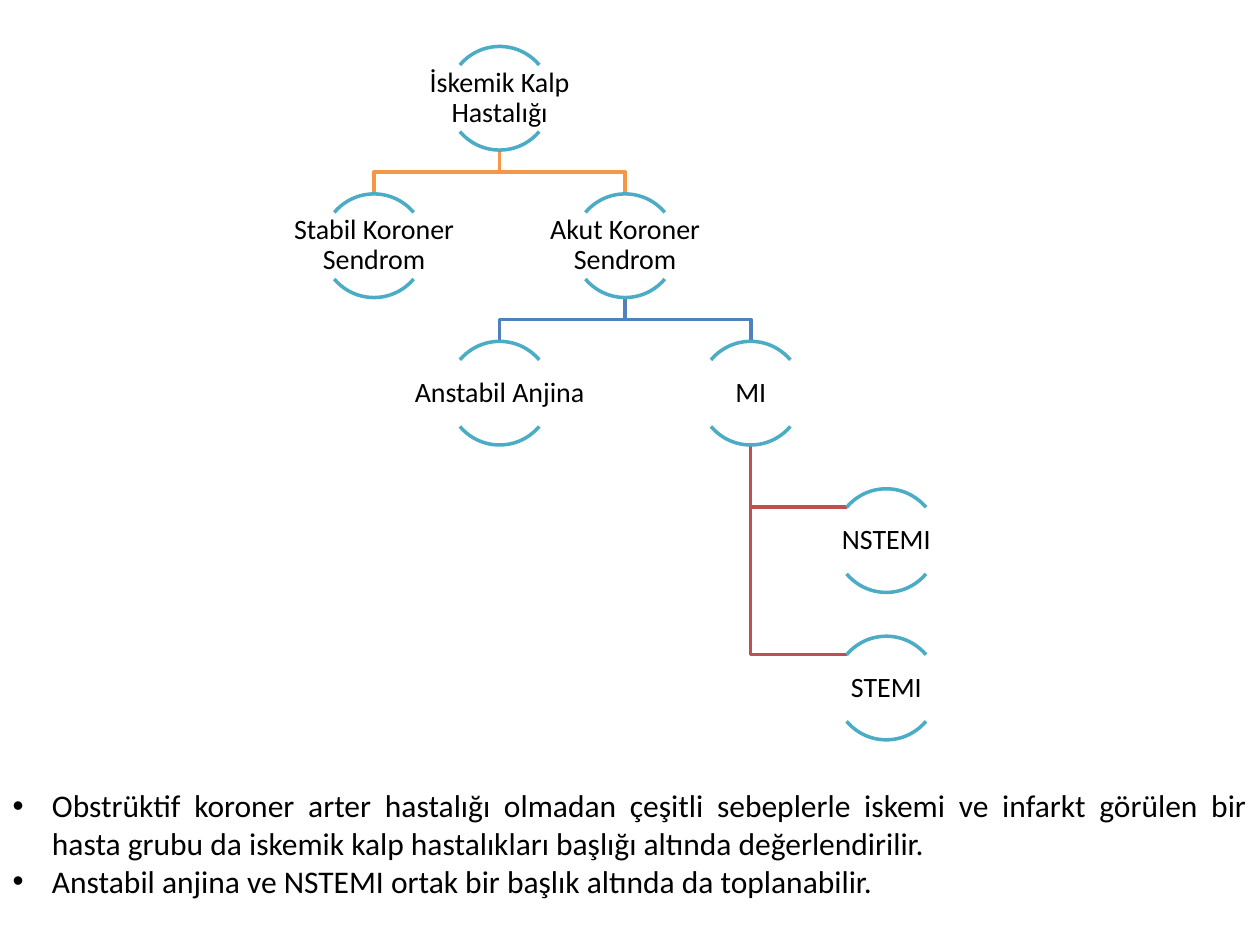
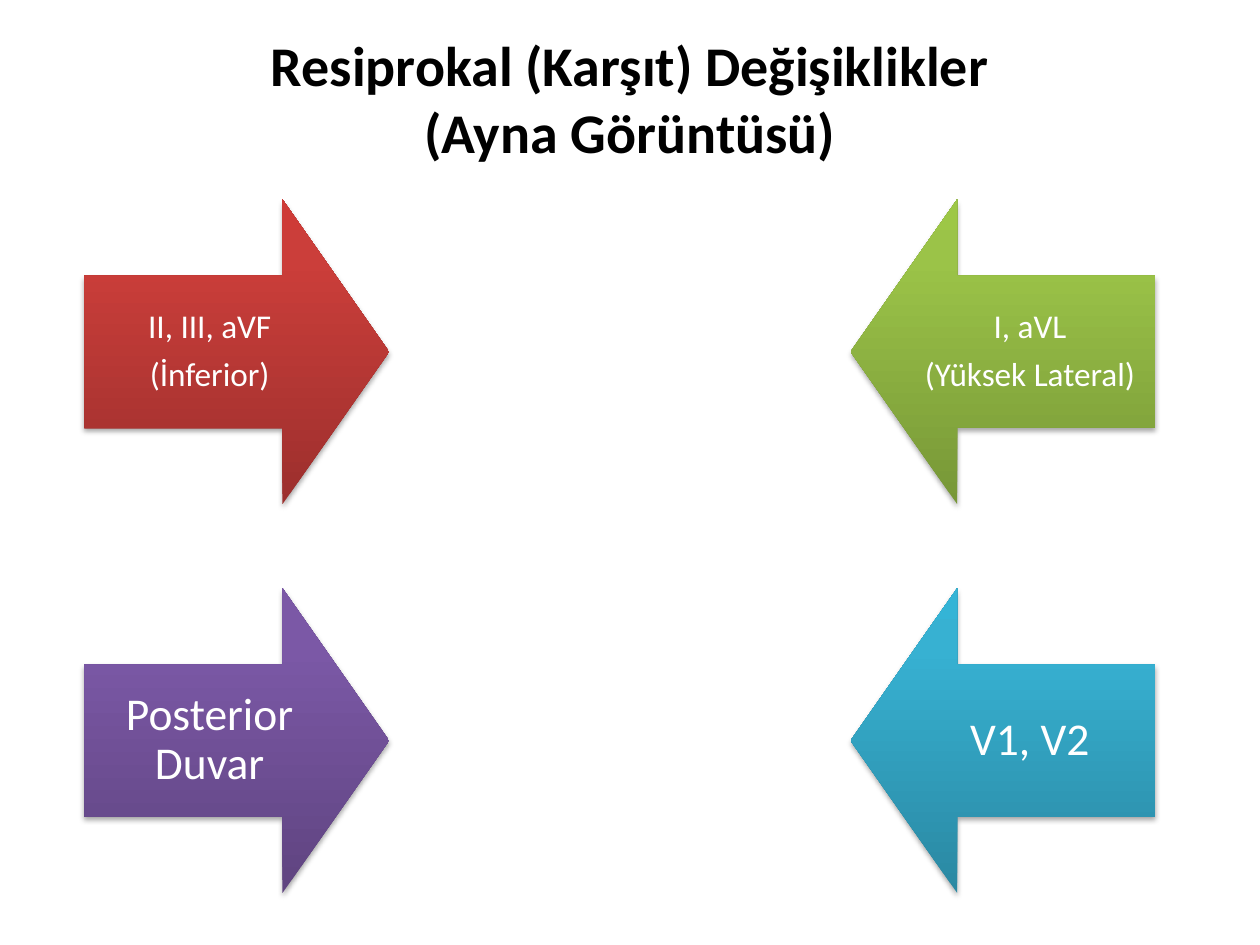
"""Build two slides: an ischaemic heart disease tree and reciprocal ECG changes."""
from copy import deepcopy

from lxml import etree
from pptx import Presentation
from pptx.dml.color import RGBColor
from pptx.enum.shapes import MSO_SHAPE
from pptx.enum.text import MSO_ANCHOR, MSO_AUTO_SIZE, PP_ALIGN
from pptx.oxml.ns import qn
from pptx.util import Pt

ARC, DOWN_ARROW = MSO_SHAPE.ARC, MSO_SHAPE.DOWN_ARROW
MIDDLE, TOP = MSO_ANCHOR.MIDDLE, MSO_ANCHOR.TOP
CENTER, JUSTIFY = PP_ALIGN.CENTER, PP_ALIGN.JUSTIFY
NO_AUTOFIT = MSO_AUTO_SIZE.NONE

FONT = "Calibri"
COLORS = {
    "text": "000000", "light": "FFFFFF", "arc": "4BACC6",
    "root link": "F79646", "acute link": "4F81BD", "infarct link": "C0504D",
}
GRADIENTS = {
    "red": ("9C2F2D", "CB3E3A", "CE3B37"),
    "green": ("779737", "9BC348", "9DC746"),
    "purple": ("5F4480", "7B58A6", "7C57A8"),
    "blue": ("2A88A2", "37B1D2", "34B4D6"),
}
GRADIENT_STOPS = (0, 80, 100)

NODES = {
    "root": ("İskemik Kalp Hastalığı", 0, 0),
    "stable": ("Stabil Koroner Sendrom", -1, 1),
    "acute": ("Akut Koroner Sendrom", 1, 1),
    "angina": ("Anstabil Anjina", 0, 2),
    "infarct": ("MI", 2, 2),
    "nstemi": ("NSTEMI", 3.08, 3),
    "stemi": ("STEMI", 3.08, 4),
}
FORKS = [
    ("acute", ("infarct", "angina"), "acute link"),
    ("root", ("acute", "stable"), "root link"),
]
HANGING = ("infarct", ("stemi", "nstemi"), "infarct link")
NOTES = [
    "Obstrüktif koroner arter hastalığı olmadan çeşitli sebeplerle iskemi ve infarkt görülen "
    "bir hasta grubu da iskemik kalp hastalıkları başlığı altında değerlendirilir.",
    "Anstabil anjina ve NSTEMI ortak bir başlık altında da toplanabilir.",
]
TITLE = "Resiprokal (Karşıt) Değişiklikler\v(Ayna Görüntüsü)"
ARROW_ROWS = [
    (19, 10.5, (["II, III, aVF", "(İnferior)"], "red"),
     (["I, aVL", "(Yüksek Lateral)"], "green")),
    (26, 14.5, (["Posterior Duvar"], "purple"), (["V1, V2"], "blue")),
]

ROOT_X, COLUMN_STEP = 285.5, 71.75
ROOT_TOP, LEVEL_STEP = 26.6, 84.25
DIAMETER, ARC_HALF_CHORD = 59.2, 22.6
LABEL_WIDTH, LABEL_HEIGHT = 119, 38.2
ARROW_SIZE, ARROW_TEXT_WIDTH = 174.2, 143.3
ARROW_LEFTS, ARROW_TOP, ARROW_STEP = (48.2, 486), 113.9, 222.2


def place(shape, left, top, width, height):
    shape.left, shape.top, shape.width, shape.height = map(Pt, (left, top, width, height))


def write_text(shape, texts, size, color="text", bold=False, align=CENTER, anchor=MIDDLE,
               inset=None, spacing=None, after=0, indent=0):
    frame = shape.text_frame
    frame.word_wrap = True
    frame.auto_size = NO_AUTOFIT
    frame.vertical_anchor = anchor
    if inset is not None:
        frame.margin_left = frame.margin_right = Pt(inset)
        frame.margin_top = frame.margin_bottom = Pt(inset)
    for index, text in enumerate(texts):
        paragraph = frame.add_paragraph() if index else frame.paragraphs[0]
        paragraph.text = text
        paragraph.alignment = align
        paragraph.space_before, paragraph.space_after = Pt(0), Pt(after)
        if spacing:
            paragraph.line_spacing = spacing
        if indent:
            properties = paragraph._p.get_or_add_pPr()
            properties.set("marL", str(Pt(indent)))
            properties.set("indent", str(Pt(-indent)))
        for run in paragraph.runs:
            run.font.name, run.font.size, run.font.bold = FONT, Pt(size), bold
            run.font.color.rgb = RGBColor.from_string(COLORS[color])
        for line_break in paragraph._p.findall(qn("a:br")):
            line_break.append(deepcopy(paragraph.runs[0]._r.rPr))


def add_label(slide, box, texts, size, **options):
    label = slide.shapes.add_textbox(*map(Pt, box))
    write_text(label, texts, size, spacing=0.9, after=round(size * 0.35, 2), **options)


def outline(shape, color):
    shape.shadow.inherit = False
    shape.fill.background()
    shape.line.color.rgb = RGBColor.from_string(COLORS[color])
    shape.line.width = Pt(2)


def node_position(key):
    _, column, level = NODES[key]
    return ROOT_X + column * COLUMN_STEP, ROOT_TOP + level * LEVEL_STEP


def add_link(slide, points, color):
    start, *others = [(Pt(x), Pt(y)) for x, y in points]
    builder = slide.shapes.build_freeform(*start, scale=1.0)
    builder.add_line_segments(others, close=False)
    outline(builder.convert_to_shape(), color)


def add_links(slide):
    parent, children, color = HANGING
    x, top = node_position(parent)
    for child in children:
        child_x, child_top = node_position(child)
        y = child_top + (DIAMETER - LABEL_HEIGHT) / 2
        add_link(slide, [(x, top + DIAMETER), (x, y), (child_x - ARC_HALF_CHORD, y)], color)
    for parent, children, color in FORKS:
        x, top = node_position(parent)
        bottom = top + DIAMETER
        for child in children:
            child_x, child_top = node_position(child)
            middle = (bottom + child_top) / 2
            add_link(slide, [(x, bottom), (x, middle), (child_x, middle),
                             (child_x, child_top)], color)


def add_node(slide, key):
    x, top = node_position(key)
    for start, end in ((220, 320), (40, 140)):
        arc = slide.shapes.add_shape(
            ARC, *map(Pt, (x - DIAMETER / 2, top, DIAMETER, DIAMETER)))
        arc.adjustments[0], arc.adjustments[1] = start * 0.6, end * 0.6
        outline(arc, "arc")
    box = (x - LABEL_WIDTH / 2, top + (DIAMETER - LABEL_HEIGHT) / 2, LABEL_WIDTH, LABEL_HEIGHT)
    add_label(slide, box, [NODES[key][0]], 16, inset=0.8)


def add_element(parent, tag, **attributes):
    values = {name: str(value) for name, value in attributes.items()}
    return etree.SubElement(parent, qn(tag), values)


def shade(shape, gradient):
    properties = shape._element.spPr
    fill = add_element(properties, "a:gradFill", rotWithShape=0)
    stops = add_element(fill, "a:gsLst")
    for position, color in zip(GRADIENT_STOPS, GRADIENTS[gradient]):
        stop = add_element(stops, "a:gs", pos=position * 1000)
        add_element(stop, "a:srgbClr", val=color)
    add_element(fill, "a:lin", ang=270 * 60000, scaled=0)
    shape.line.fill.background()
    effects = add_element(properties, "a:effectLst")
    shadow = add_element(effects, "a:outerShdw", blurRad=Pt(3.1), dist=Pt(1.8),
                         dir=90 * 60000, rotWithShape=0)
    color = add_element(shadow, "a:srgbClr", val="000000")
    add_element(color, "a:alpha", val=35000)


def add_arrow(slide, left, top, rotation, gradient):
    arrow = slide.shapes.add_shape(DOWN_ARROW, *map(Pt, (left, top, ARROW_SIZE, ARROW_SIZE)))
    arrow.rotation = rotation
    arrow.adjustments[0], arrow.adjustments[1] = 0.5, 0.35
    shade(arrow, gradient)


def build_tree_slide(presentation):
    slide = presentation.slides.add_slide(presentation.slide_layouts[1])
    title = slide.shapes.title._element
    title.getparent().remove(title)
    add_links(slide)
    for key in NODES:
        add_node(slide, key)
    body = slide.placeholders[1]
    place(body, 0, 445.7, 720, 94.3)
    write_text(body, NOTES, 18, align=JUSTIFY, anchor=TOP, indent=22.5)


def build_arrow_slide(presentation):
    slide = presentation.slides.add_slide(presentation.slide_layouts[5])
    place(slide.shapes.title, 36, 21.6, 648, 68.4)
    write_text(slide.shapes.title, [TITLE], 32, bold=True)
    for row, (size, inset, *arrows) in enumerate(ARROW_ROWS):
        top = ARROW_TOP + row * ARROW_STEP
        text_lefts = (ARROW_LEFTS[0], ARROW_LEFTS[1] + ARROW_SIZE - ARROW_TEXT_WIDTH)
        for (texts, gradient), left, text_left, rotation in zip(
                arrows, ARROW_LEFTS, text_lefts, (270, 90)):
            add_arrow(slide, left, top, rotation, gradient)
            box = (text_left, top + ARROW_SIZE / 4, ARROW_TEXT_WIDTH, ARROW_SIZE / 2)
            add_label(slide, box, texts, size, color="light", inset=inset)


def main():
    presentation = Presentation()
    presentation.slide_width, presentation.slide_height = Pt(720), Pt(540)
    build_tree_slide(presentation)
    build_arrow_slide(presentation)
    presentation.save("out.pptx")


if __name__ == "__main__":
    main()
